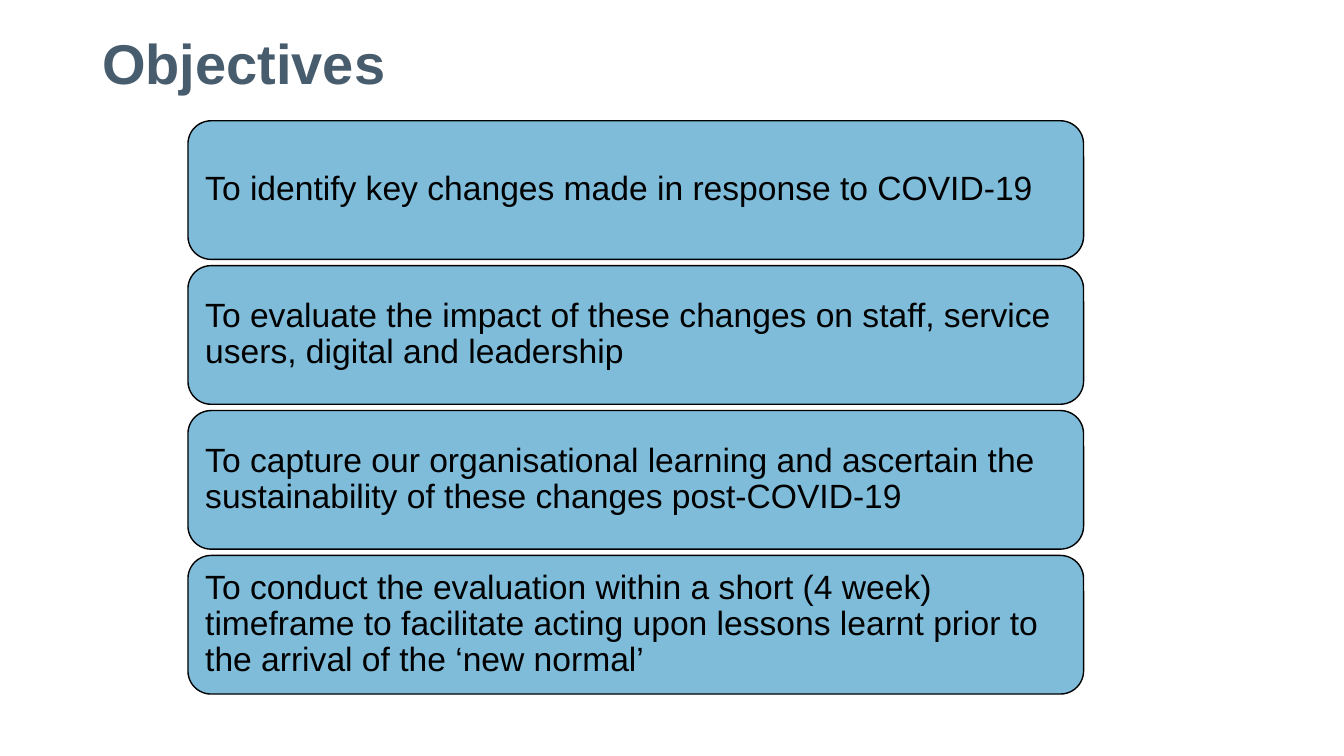
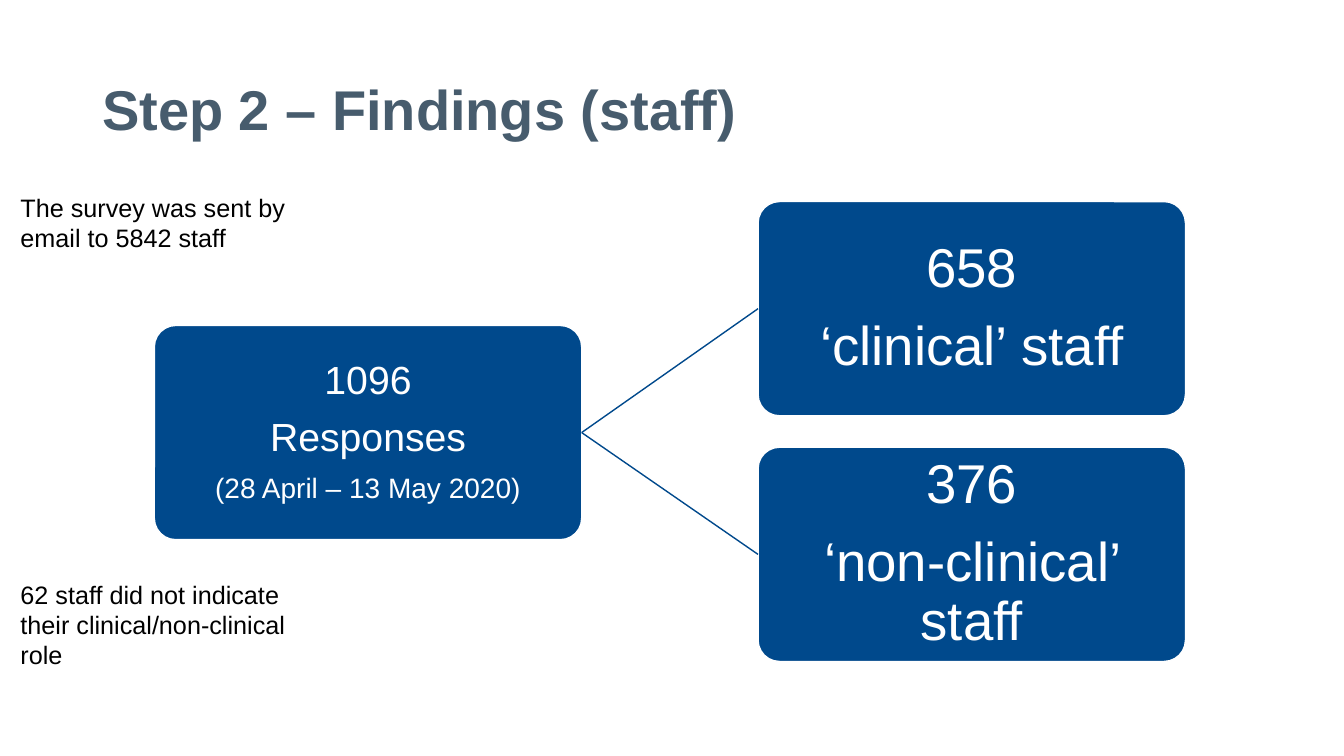
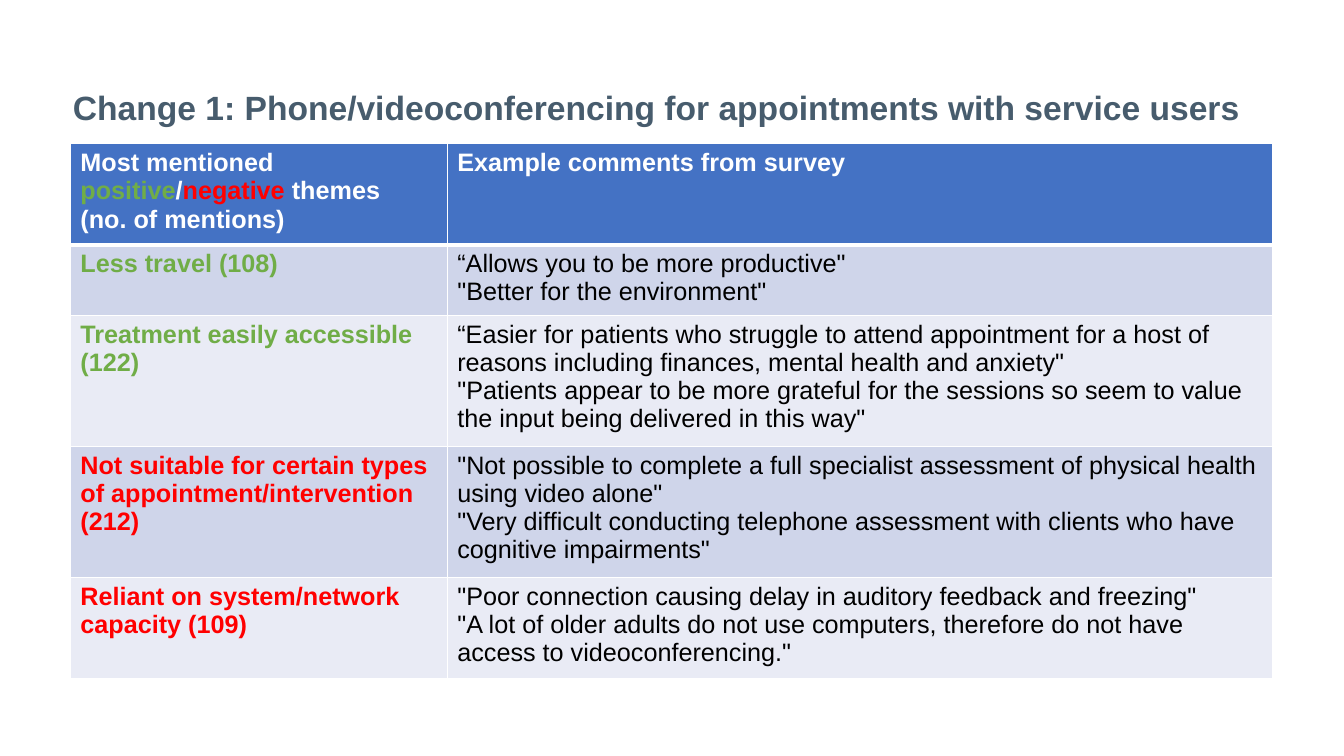
"""Build three slides on the evaluation of service changes: objectives, staff findings and survey themes."""
from dataclasses import dataclass

from lxml.etree import SubElement
from pptx import Presentation
from pptx.dml.color import RGBColor
from pptx.enum.shapes import MSO_CONNECTOR as Connector, MSO_SHAPE as Shape
from pptx.enum.text import MSO_ANCHOR as Anchor, PP_ALIGN as Align
from pptx.oxml.ns import qn
from pptx.util import Emu, Pt


@dataclass(frozen=True)
class Theme:
    font: str = "Arial"
    heading: str = "475C6D"
    black: str = "000000"
    white: str = "FFFFFF"
    sky: str = "7EBCDA"
    navy: str = "00498C"
    header: str = "4472C4"
    bands: tuple = ("CFD5EA", "E9EBF5")
    positive: str = "70AD47"
    negative: str = "FF0000"
    title_size: int = 40
    figure_size: int = 39
    response_size: int = 28
    body_size: int = 24
    date_size: int = 20
    note_size: int = 18


theme = Theme()
PX = 9525
TIGHT = 0.9
SIDES = ("left", "right", "top", "bottom")


def write(frame, paragraphs, frame_format=None, paragraph_format=None):
    for name, value in {"word_wrap": True, **(frame_format or {})}.items():
        setattr(frame, name, value)
    for index, runs in enumerate(paragraphs):
        paragraph = frame.paragraphs[0] if index == 0 else frame.add_paragraph()
        for name, value in (paragraph_format or {}).items():
            setattr(paragraph, name, value)
        if index < len(paragraphs) - 1 and paragraph_format:
            paragraph.space_after = Pt(round(0.35 * runs[0][1]))
        for text, size, colour, bold in runs:
            run = paragraph.add_run()
            run.text = text
            for name, value in {"name": theme.font, "size": Pt(size), "bold": bold}.items():
                setattr(run.font, name, value)
            run.font.color.rgb = RGBColor.from_string(colour)


def add_card(slide, box, paragraphs, fill, outline, inset, align):
    card = slide.shapes.add_shape(Shape.ROUNDED_RECTANGLE, *(Emu(v * PX) for v in box))
    card.shadow.inherit = False
    card.fill.solid()
    card.fill.fore_color.rgb = RGBColor.from_string(fill)
    card.line.color.rgb = RGBColor.from_string(outline)
    card.line.width = Pt(1)
    margins = {f"margin_{side}": Emu(inset * PX) for side in SIDES}
    write(card.text_frame, paragraphs, {"vertical_anchor": Anchor.MIDDLE, **margins},
          {"alignment": align, "line_spacing": TIGHT})
    return card


deck = Presentation()
deck.slide_width, deck.slide_height = Emu(1280 * PX), Emu(720 * PX)

titles = [
    ("Objectives", theme.title_size, (88, 4, 1104, 119)),
    ("Step 2 – Findings (staff)", theme.title_size, (88, 38, 1104, 139)),
    ("Change 1: Phone/videoconferencing for appointments with service users",
     theme.body_size, (60, 35, 1155, 139)),
]
slides = []
for title, size, box in titles:
    slide = deck.slides.add_slide(deck.slide_layouts[6])
    heading = slide.shapes.add_textbox(*(Emu(v * PX) for v in box))
    write(heading.text_frame, [[(title, size, theme.heading, True)]],
          {"vertical_anchor": Anchor.MIDDLE}, {"line_spacing": TIGHT})
    slides.append(slide)
objectives_slide, findings_slide, themes_slide = slides

objectives = [
    "To identify key changes made in response to COVID-19",
    "To evaluate the impact of these changes on staff, service users, digital and leadership",
    "To capture our organisational learning and ascertain the sustainability of these changes post-COVID-19",
    "To conduct the evaluation within a short (4 week) timeframe to facilitate acting upon lessons learnt "
    "prior to the arrival of the ‘new normal’",
]
for index, objective in enumerate(objectives):
    add_card(objectives_slide, (179, 115 + 138 * index, 853, 132),
             [[(objective, theme.body_size, theme.black, False)]],
             theme.sky, theme.black, 10, Align.LEFT)

staff_groups = [
    (147, 310, [("1096", theme.response_size), ("Responses", theme.response_size),
                ("(28 April – 13 May 2020)", theme.date_size)]),
    (722, 192, [("658", theme.figure_size), ("‘clinical’ staff", theme.figure_size)]),
    (722, 426, [("376", theme.figure_size), ("‘non-clinical’ staff", theme.figure_size)]),
]
staff_cards = []
for left, top, lines in staff_groups:
    card = add_card(findings_slide, (left, top, 407, 204),
                    [[(text, size, theme.white, False)] for text, size in lines],
                    theme.navy, theme.white, 3, Align.CENTER)
    card.adjustments[0] = 0.1
    staff_cards.append(card)

responses, *roles = staff_cards
for role in roles:
    branch = findings_slide.shapes.add_connector(Connector.STRAIGHT, 0, 0, 0, 0)
    branch.begin_connect(responses, 3)
    branch.end_connect(role, 1)
    branch.line.color.rgb = RGBColor.from_string(theme.navy)
    branch.line.width = Pt(1)
    SubElement(branch.line._get_or_add_ln().getparent(), qn("a:effectLst"))

survey_notes = [
    ("The survey was sent by email to 5842 staff", 178, 68),
    ("62 staff did not indicate their clinical/non-clinical role", 547, 97),
]
for text, top, height in survey_notes:
    note = findings_slide.shapes.add_textbox(*(Emu(v * PX) for v in (10, top, 276, height)))
    write(note.text_frame, [[(text, theme.note_size, theme.black, False)]])

column_widths = (359, 786)
row_heights = (89, 64, 117, 117, 90)
survey_themes = [
    ("Less travel (108)", theme.positive,
     ["“Allows you to be more productive\"", "\"Better for the environment\""]),
    ("Treatment easily accessible (122)", theme.positive,
     ["“Easier for patients who struggle to attend appointment for a host of reasons including finances, "
      "mental health and anxiety\"",
      "\"Patients appear to be more grateful for the sessions so seem to value the input being delivered "
      "in this way\""]),
    ("Not suitable for certain types of appointment/intervention (212)", theme.negative,
     ["\"Not possible to complete a full specialist assessment of physical health using video alone\"",
      "\"Very difficult conducting telephone assessment with clients who have cognitive impairments\""]),
    ("Reliant on system/network capacity (109)", theme.negative,
     ["\"Poor connection causing delay in auditory feedback and freezing\"",
      "\"A lot of older adults do not use computers, therefore do not have access to videoconferencing.\""]),
]
header_runs = [("Most mentioned ", theme.white), ("positive", theme.positive), ("/", theme.white),
               ("negative", theme.negative), (" themes", theme.white)]
size = theme.note_size
table_rows = [(
    [[(text, size, colour, True) for text, colour in header_runs],
     [("(no. of mentions)", size, theme.white, True)]],
    [[("Example comments from survey", size, theme.white, True)]],
)]
for label, colour, comments in survey_themes:
    table_rows.append(([[(label, size, colour, True)]],
                       [[(comment, size, theme.black, False)] for comment in comments]))

table_box = (67, 137, sum(column_widths), sum(row_heights))
table = themes_slide.shapes.add_table(
    len(row_heights), len(column_widths), *(Emu(v * PX) for v in table_box)).table
for column, width in zip(table.columns, column_widths):
    column.width = Emu(width * PX)
for row_index, (row, height, contents) in enumerate(zip(table.rows, row_heights, table_rows)):
    row.height = Emu(height * PX)
    fill = theme.bands[(row_index - 1) % 2] if row_index else theme.header
    for cell, paragraphs in zip(row.cells, contents):
        write(cell.text_frame, paragraphs)
        properties = cell._tc.get_or_add_tcPr()
        for side in SIDES:
            heavy = (row_index, side) in ((0, "bottom"), (1, "top"))
            border = SubElement(properties, qn(f"a:ln{side[0].upper()}"), w=str(Pt(3 if heavy else 1)))
            SubElement(SubElement(border, qn("a:solidFill")), qn("a:srgbClr"), val=theme.white)
        cell.fill.solid()
        cell.fill.fore_color.rgb = RGBColor.from_string(fill)

deck.save("out.pptx")
